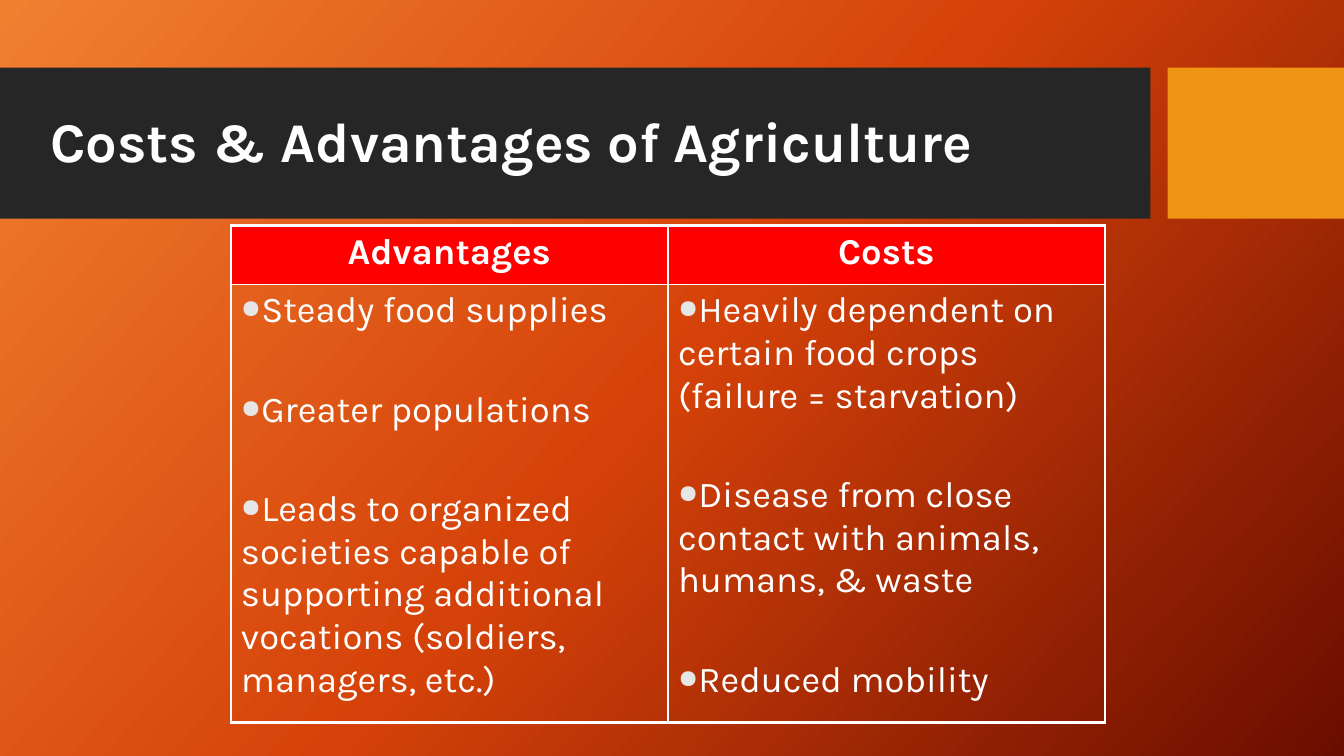
"""Build the slide on the costs and advantages of agriculture."""
from dataclasses import dataclass

from lxml.etree import SubElement
from pptx import Presentation
from pptx.dml.color import RGBColor
from pptx.enum.shapes import MSO_SHAPE
from pptx.enum.text import MSO_ANCHOR, PP_ALIGN
from pptx.oxml import parse_xml
from pptx.oxml.ns import nsdecls, qn
from pptx.slide import Slide
from pptx.table import Table, _Cell
from pptx.text.text import _Paragraph
from pptx.util import Inches, Pt

COLOURS = {
    "white": "FFFFFF",
    "band": "262626",
    "accent": "F09415",
    "header": "FF0000",
    "bullet": "E7E6E6",
    "light": "F18031",
    "middle": "D54209",
    "dark": "6A0D00",
}
FONT = "Karla"
OUTER_LINE, INNER_LINE = 2.25, 1
BULLET_GAP = 40.5


@dataclass
class Band:
    left: float
    width: float
    colour: str


@dataclass
class Column:
    heading: str
    points: list[str]


BANDS = [Band(0, 11.41, "band"), Band(11.58, 1.75, "accent")]
COLUMNS = [
    Column("Advantages", [
        "Steady food supplies",
        "Greater populations",
        "Leads to organized societies capable of supporting additional "
        "vocations (soldiers, managers, etc.)",
    ]),
    Column("Costs", [
        "Heavily dependent on certain food crops (failure = starvation)",
        "Disease from close contact with animals, humans, & waste",
        "Reduced mobility",
    ]),
]


def rgb(name: str) -> RGBColor:
    return RGBColor.from_string(COLOURS[name])


def paint_background(page: Slide) -> None:
    page.background.fill.gradient()
    page.background.fill.gradient_angle = 318
    stops = page.element.xpath(".//p:bg//a:gsLst")[0]
    for stop in list(stops):
        stops.remove(stop)
    for percent, name in ((0, "light"), (50, "middle"), (100, "dark")):
        stop = SubElement(stops, qn("a:gs"), pos=str(percent * 1000))
        SubElement(stop, qn("a:srgbClr"), val=COLOURS[name])


def add_band(page: Slide, band: Band) -> None:
    shape = page.shapes.add_shape(
        MSO_SHAPE.RECTANGLE, Inches(band.left), Inches(0.67), Inches(band.width), Inches(1.5))
    shape.shadow.inherit = False
    shape.fill.solid()
    shape.fill.fore_color.rgb = rgb(band.colour)
    shape.line.fill.background()


def add_span(para: _Paragraph, text: str, size: float, bold: bool) -> None:
    span = para.add_run()
    span.text = text
    span.font.name = FONT
    span.font.size = Pt(size)
    span.font.bold = bold
    span.font.color.rgb = rgb("white")


def add_title(page: Slide, text: str) -> None:
    box = page.shapes.add_textbox(Inches(0.4), Inches(1.01), Inches(10.56), Inches(0.77))
    box.text_frame.word_wrap = True
    box.text_frame.vertical_anchor = MSO_ANCHOR.MIDDLE
    add_span(box.text_frame.paragraphs[0], text, 40, True)


def add_bullet(para: _Paragraph) -> None:
    properties = para._p.get_or_add_pPr()
    colour = SubElement(properties, qn("a:buClr"))
    SubElement(colour, qn("a:srgbClr"), val=COLOURS["bullet"])
    SubElement(properties, qn("a:buSzPct"), val="70000")
    SubElement(properties, qn("a:buChar"), char="●")


def set_borders(cell: _Cell, outer_sides: str) -> None:
    properties = cell._tc.get_or_add_tcPr()
    for index, side in enumerate("LRTB"):
        width = Pt(OUTER_LINE if side in outer_sides else INNER_LINE)
        properties.insert(index, parse_xml(
            f'<a:ln{side} {nsdecls("a")} w="{width}"><a:solidFill>'
            f'<a:srgbClr val="{COLOURS["white"]}"/></a:solidFill></a:ln{side}>'))


def fill_column(table: Table, index: int, column: Column) -> None:
    side = "LR"[index]
    table.columns[index].width = Inches(4.335)

    header = table.cell(0, index)
    header.fill.solid()
    header.fill.fore_color.rgb = rgb("header")
    set_borders(header, side + "T")
    heading = header.text_frame.paragraphs[0]
    heading.alignment = PP_ALIGN.CENTER
    add_span(heading, column.heading, 26, True)

    body = table.cell(1, index)
    body.fill.background()
    set_borders(body, side + "B")
    for number, point in enumerate(column.points):
        para = body.text_frame.add_paragraph() if number else body.text_frame.paragraphs[0]
        add_bullet(para)
        if number:
            para.space_before = Pt(BULLET_GAP)
        add_span(para, point, 26, False)


def add_comparison(page: Slide) -> None:
    table = page.shapes.add_table(
        2, len(COLUMNS), Inches(2.29), Inches(2.24), Inches(8.67), Inches(4.93)).table
    table.first_row = False
    table.horz_banding = False
    for row, height in zip(table.rows, (0.58, 4.35)):
        row.height = Inches(height)
    for index, column in enumerate(COLUMNS):
        fill_column(table, index, column)


def main() -> None:
    deck = Presentation()
    deck.slide_width, deck.slide_height = Inches(13.33), Inches(7.5)
    page = deck.slides.add_slide(deck.slide_layouts[6])
    paint_background(page)
    for band in BANDS:
        add_band(page, band)
    add_title(page, "Costs & Advantages of Agriculture")
    add_comparison(page)
    deck.save("out.pptx")


if __name__ == "__main__":
    main()
